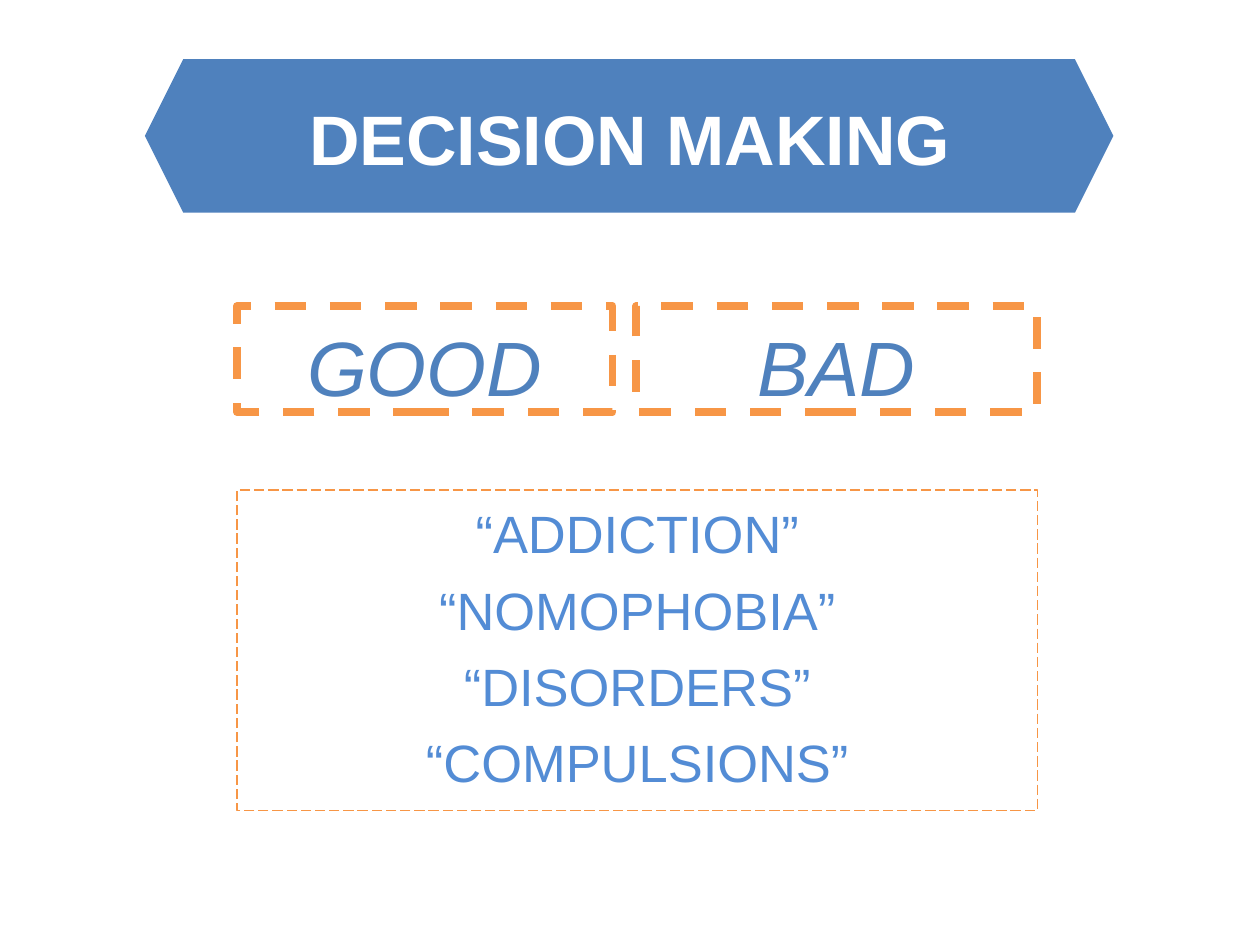
from pptx import Presentation
from pptx.dml.color import RGBColor
from pptx.enum.dml import MSO_LINE
from pptx.enum.shapes import MSO_SHAPE as SHAPE
from pptx.enum.text import MSO_ANCHOR, PP_ALIGN
from pptx.util import Pt

COLORS = {"blue": "4F81BD", "light": "538CD5", "orange": "F79646", "white": "FFFFFF"}


def rgb(name):
    return RGBColor.from_string(COLORS[name])


def write(sp, lines, size, color, bold=False, italic=False):
    tf = sp.text_frame
    tf.word_wrap = True
    tf.vertical_anchor = MSO_ANCHOR.TOP
    tf.text = "\n".join(lines)
    for i, p in enumerate(tf.paragraphs):
        p.alignment = PP_ALIGN.CENTER
        p.line_spacing = 1.08
        if i:
            p.space_before = Pt(4.8)
        p.font.name = "Arial"
        p.font.size = Pt(size)
        p.font.bold = bold
        p.font.italic = italic
        p.font.color.rgb = rgb(color)


prs = Presentation()
prs.slide_width, prs.slide_height = Pt(720), Pt(540)
s = prs.slides.add_slide(prs.slide_layouts[6])

# Title banner
banner = s.shapes.add_shape(SHAPE.HEXAGON, Pt(82.8), Pt(33.8), Pt(553.4), Pt(87.8))
banner.adjustments[0] = 0.25
banner.shadow.inherit = False
banner.fill.solid()
banner.fill.fore_color.rgb = rgb("blue")
banner.line.fill.background()

title = s.shapes.add_textbox(0, Pt(47.5), Pt(720), Pt(55.4))
write(title, ["DECISION MAKING"], 40, "white", bold=True)

# Dashed boxes: left, top, width, height, line width, dash, text, size, color, italic
TERMS = ["“ADDICTION”", "“NOMOPHOBIA”", "“DISORDERS”", "“COMPULSIONS”"]
BOXES = [
    (135.4, 175, 214.6, 60.5, 4.5, MSO_LINE.DASH, ["GOOD"], 44, "blue", True),
    (363.6, 175, 229, 60.5, 4.5, MSO_LINE.DASH, ["BAD"], 44, "blue", True),
    (135.4, 280, 457.6, 183, 0.75, MSO_LINE.LONG_DASH, TERMS, 30, "light", False),
]
for left, top, width, height, weight, dash, lines, size, color, italic in BOXES:
    sp = s.shapes.add_shape(SHAPE.RECTANGLE, Pt(left), Pt(top), Pt(width), Pt(height))
    sp.shadow.inherit = False
    sp.fill.background()
    sp.line.color.rgb = rgb("orange")
    sp.line.width = Pt(weight)
    sp.line.dash_style = dash
    write(sp, lines, size, color, italic=italic)

prs.save("out.pptx")
